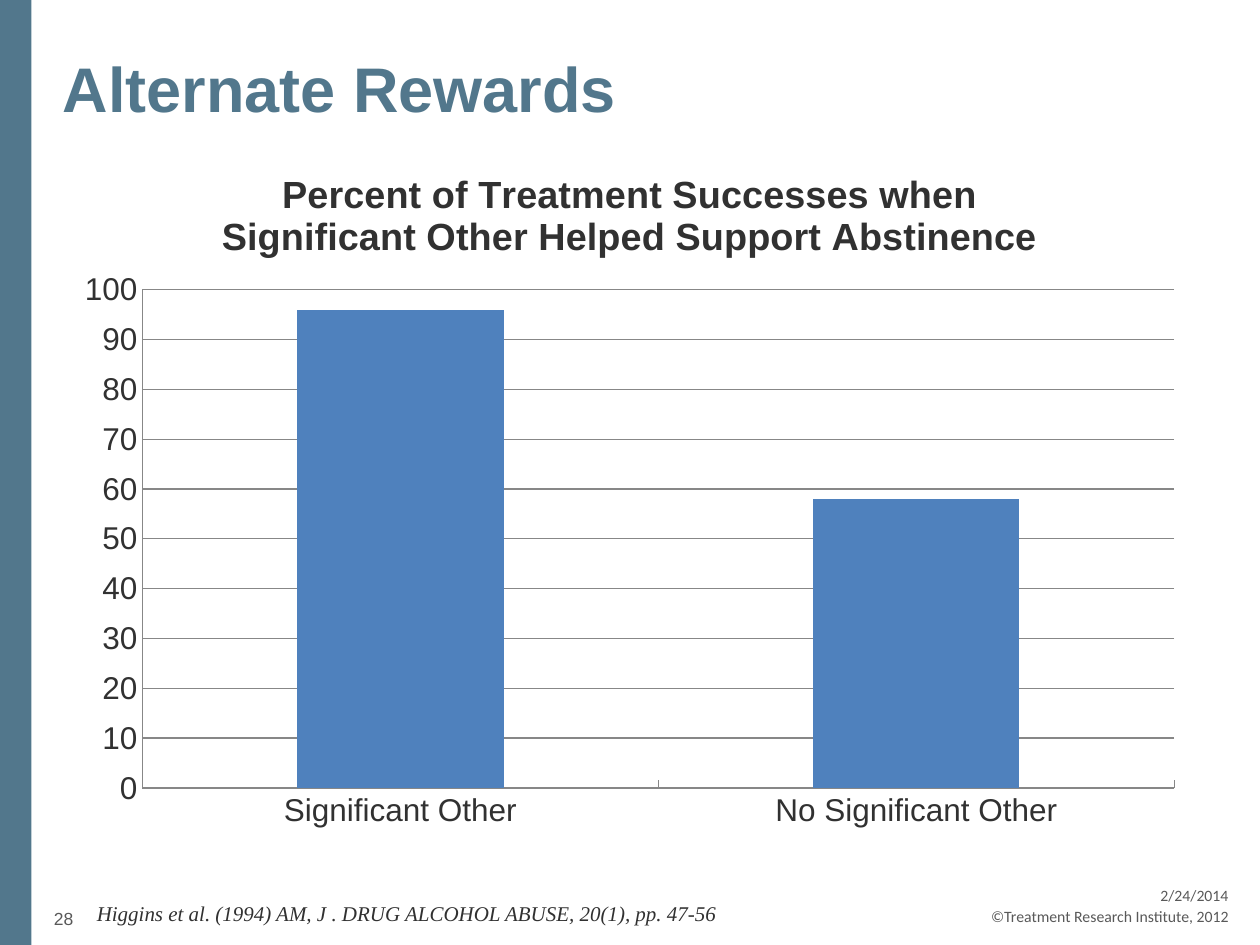
from dataclasses import dataclass

from lxml.etree import SubElement
from pptx import Presentation
from pptx.chart.data import CategoryChartData
from pptx.dml.color import RGBColor
from pptx.enum.chart import XL_CHART_TYPE, XL_TICK_MARK
from pptx.enum.shapes import MSO_SHAPE
from pptx.enum.text import MSO_ANCHOR, PP_ALIGN
from pptx.oxml.ns import qn
from pptx.util import Inches, Pt


@dataclass(frozen=True)
class Theme:
    """Hold the colours, fonts and type sizes of the slide."""
    brand: str = "52778C"
    ink: str = "313131"
    grey: str = "595959"
    rule: str = "878787"
    bar: str = "4F81BD"
    sans: str = "Arial"
    serif: str = "Times New Roman"
    foot: str = "Calibri"
    head: float = 36
    title: float = 21.6
    label: float = 18
    cite: float = 12
    page: float = 10
    small: float = 9


LOOK = Theme()


def apply(item, form):
    """Set each attribute named in a dict of format values."""
    for key, value in form.items():
        setattr(item, key, value)


def style(font, size, name, tint, **extra):
    """Give a font its size, face and colour."""
    apply(font, {"size": Pt(size), "name": name, **extra})
    font.color.rgb = RGBColor.from_string(tint)


def add_text(slide, area, text, face, inset=(0.1, 0.05, 0.1, 0.05),
             anchor=MSO_ANCHOR.TOP, align=PP_ALIGN.LEFT, **extra):
    """Add a one-line text box."""
    frame = slide.shapes.add_textbox(*map(Inches, area)).text_frame
    sides = ("margin_left", "margin_top", "margin_right", "margin_bottom")
    apply(frame, {"word_wrap": True, "vertical_anchor": anchor,
                  **dict(zip(sides, map(Inches, inset)))})
    line = frame.paragraphs[0]
    line.alignment = align
    run = line.add_run()
    run.text = text
    style(run.font, *face, **extra)


def add_band(slide, area):
    """Add the coloured band on the left edge."""
    band = slide.shapes.add_shape(MSO_SHAPE.RECTANGLE, *map(Inches, area))
    band.shadow.inherit = False
    band.fill.solid()
    band.fill.fore_color.rgb = RGBColor.from_string(LOOK.brand)
    band.line.fill.background()


def set_plot(chart, **frame):
    """Fix the inner plot area as fractions of the chart."""
    area = chart.plots[0]._element.getparent()
    for old in area.findall(qn("c:layout")):
        area.remove(old)
    layout = SubElement(area, qn("c:layout"))
    area.insert(0, layout)
    manual = SubElement(layout, qn("c:manualLayout"))
    parts = {"layoutTarget": "inner", "xMode": "edge", "yMode": "edge", **frame}
    for tag, value in parts.items():
        SubElement(manual, qn(f"c:{tag}")).set("val", str(value))


def add_bars(slide, area, title, cats, vals):
    """Add the column chart with its title and axes."""
    data = CategoryChartData()
    data.categories = cats
    data.add_series("Series 1", vals)
    chart = slide.shapes.add_chart(
        XL_CHART_TYPE.COLUMN_CLUSTERED, *map(Inches, area), data).chart
    chart.has_legend = False
    style(chart.font, LOOK.label, LOOK.sans, LOOK.ink)
    chart.has_title = True
    chart.chart_title.include_in_layout = False
    run = chart.chart_title.text_frame.paragraphs[0].add_run()
    run.text = title
    style(run.font, LOOK.title, LOOK.sans, LOOK.ink, bold=True)

    plot = chart.plots[0]
    apply(plot, {"gap_width": 150, "vary_by_categories": False})
    fill = plot.series[0].format.fill
    fill.solid()
    fill.fore_color.rgb = RGBColor.from_string(LOOK.bar)

    cat, val = chart.category_axis, chart.value_axis
    apply(cat, {"major_tick_mark": XL_TICK_MARK.INSIDE,
                "minor_tick_mark": XL_TICK_MARK.NONE})
    apply(val, {"major_tick_mark": XL_TICK_MARK.NONE,
                "minor_tick_mark": XL_TICK_MARK.NONE,
                "minimum_scale": 0, "maximum_scale": 100,
                "major_unit": 10, "has_major_gridlines": True})
    for part in (cat, val, val.major_gridlines):
        part.format.line.width = Pt(0.75)
        part.format.line.color.rgb = RGBColor.from_string(LOOK.rule)
    set_plot(chart, x=0.07, y=0.21, w=0.91, h=0.71)


def main():
    """Build the slide and save it."""
    deck = Presentation()
    apply(deck, {"slide_width": Inches(10), "slide_height": Inches(7.5)})
    slide = deck.slides.add_slide(deck.slide_layouts[6])

    small = (LOOK.small, LOOK.foot, LOOK.grey)
    notes = {7.2: "©Treatment Research Institute, 2012", 7.03: "2/24/2014"}
    for top, text in notes.items():
        add_text(slide, (6.58, top, 3.17, 0.22), text, small,
                 inset=(0, 0, 0, 0), align=PP_ALIGN.RIGHT)

    add_band(slide, (0, 0, 0.25, 7.5))
    add_text(slide, (0.5, 0.3, 9, 0.78), "Alternate Rewards",
             (LOOK.head, LOOK.sans, LOOK.brand), inset=(0, 0.05, 0.1, 0.05),
             anchor=MSO_ANCHOR.MIDDLE, bold=True)
    add_bars(slide, (0.5, 1.13, 9, 5.57),
             "Percent of Treatment Successes when "
             "Significant Other Helped Support Abstinence",
             ("Significant Other", "No Significant Other"), (96, 58))
    add_text(slide, (0.67, 7.1, 5.9, 0.3),
             "Higgins et al. (1994) AM, J . DRUG ALCOHOL ABUSE, 20(1), pp. 47-56",
             (LOOK.cite, LOOK.serif, LOOK.ink), italic=True)
    add_text(slide, (0.33, 7.09, 2.33, 0.4), "28",
             (LOOK.page, LOOK.sans, LOOK.grey), anchor=MSO_ANCHOR.MIDDLE)

    deck.save("out.pptx")


if __name__ == "__main__":
    main()
